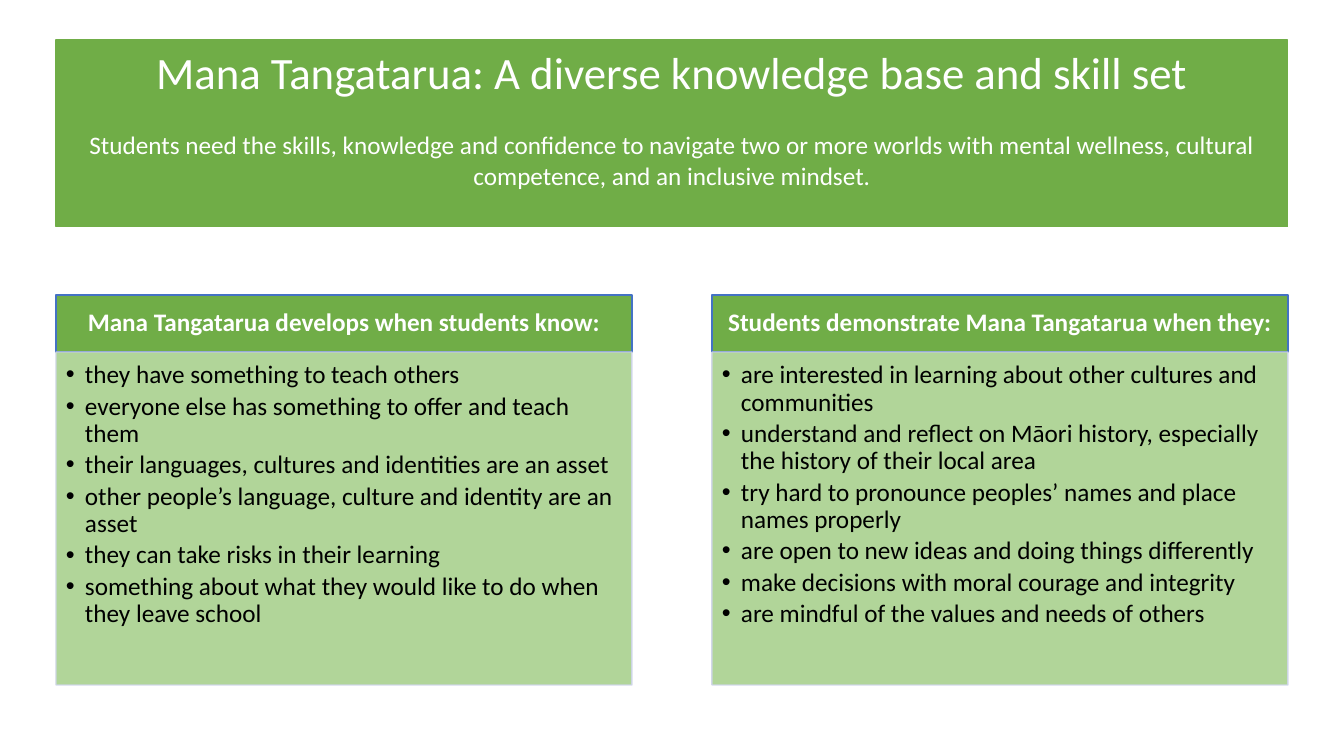
import pptx
import pptx.util
import pptx.dml.color
import pptx.enum.shapes
import pptx.enum.text
import pptx.oxml.ns
import lxml.etree

PX = 914400 / 100.8
COLORS = {
    "green": "70AD47",
    "pale_green": "A9D18E",
    "blue": "4472C4",
    "pale_blue": "CFD5EA",
    "white": "FFFFFF",
    "black": "000000",
}
CENTER = pptx.enum.text.PP_ALIGN.CENTER
TOP = pptx.enum.text.MSO_ANCHOR.TOP
MIDDLE = pptx.enum.text.MSO_ANCHOR.MIDDLE


def px(length):
    return pptx.util.Emu(round(length * PX))


def style_box(box, fill, line, line_width, anchor, insets):
    box.fill.solid()
    box.fill.fore_color.rgb = pptx.dml.color.RGBColor.from_string(COLORS[fill])
    box.line.color.rgb = pptx.dml.color.RGBColor.from_string(COLORS[line])
    box.line.width = pptx.util.Pt(line_width)
    frame = box.text_frame
    frame.word_wrap = True
    frame.auto_size = pptx.enum.text.MSO_AUTO_SIZE.NONE
    frame.vertical_anchor = anchor
    frame.margin_left, frame.margin_top, frame.margin_right, frame.margin_bottom = map(px, insets)


deck = pptx.Presentation()
deck.slide_width = px(1344)
deck.slide_height = px(756)
page = deck.slides.add_slide(deck.slide_layouts[5])

LEFT, PANEL_WIDTH, PANEL_GAP = 56, 576, 80
HEADER_TOP, HEADER_HEIGHT, LIST_HEIGHT = 295, 57, 333

banner = page.shapes.title
banner.left, banner.top = px(LEFT), px(40)
banner.width, banner.height = px(2 * PANEL_WIDTH + PANEL_GAP), px(187)
style_box(banner, "green", "green", 0.75, TOP, (10, 5, 10, 5))
banner.text_frame.text = (
    "Mana Tangatarua: A diverse knowledge base and skill set\n"
    "Students need the skills, knowledge and confidence to navigate two or more worlds "
    "with mental wellness, cultural competence, and an inclusive mindset."
)
for para, size, space in zip(banner.text_frame.paragraphs, (32, 18), (0, 22)):
    para.alignment = CENTER
    para.space_before = pptx.util.Pt(space)
    font = para.runs[0].font
    font.name = "Calibri"
    font.size = pptx.util.Pt(size)
    font.color.rgb = pptx.dml.color.RGBColor.from_string(COLORS["white"])

panels = [
    ("Mana Tangatarua develops when students know:", [
        "they have something to teach others",
        "everyone else has something to offer and teach them",
        "their languages, cultures and identities are an asset",
        "other people’s language, culture and identity are an asset",
        "they can take risks in their learning",
        "something about what they would like to do when they leave school",
    ]),
    ("Students demonstrate Mana Tangatarua when they:", [
        "are interested in learning about other cultures and communities",
        "understand and reflect on Māori history, especially the history of their local area",
        "try hard to pronounce peoples’ names and place names properly",
        "are open to new ideas and doing things differently",
        "make decisions with moral courage and integrity",
        "are mindful of the values and needs of others",
    ]),
]

for column, (heading, points) in enumerate(panels):
    left = LEFT + column * (PANEL_WIDTH + PANEL_GAP)
    header = page.shapes.add_shape(
        pptx.enum.shapes.MSO_SHAPE.RECTANGLE,
        px(left), px(HEADER_TOP), px(PANEL_WIDTH), px(HEADER_HEIGHT))
    header.shadow.inherit = False
    style_box(header, "green", "blue", 1, MIDDLE, (14, 8, 14, 8))
    header.text_frame.text = heading
    para = header.text_frame.paragraphs[0]
    para.alignment = CENTER
    para.line_spacing = 0.9
    font = para.runs[0].font
    font.name = "Calibri"
    font.size = pptx.util.Pt(18)
    font.bold = True
    font.color.rgb = pptx.dml.color.RGBColor.from_string(COLORS["white"])

    body = page.shapes.add_shape(
        pptx.enum.shapes.MSO_SHAPE.RECTANGLE,
        px(left), px(HEADER_TOP + HEADER_HEIGHT), px(PANEL_WIDTH), px(LIST_HEIGHT))
    body.shadow.inherit = False
    style_box(body, "pale_green", "pale_blue", 1, TOP, (10, 10, 14, 16))
    for color in body._element.spPr.iter(pptx.oxml.ns.qn("a:srgbClr")):
        lxml.etree.SubElement(color, pptx.oxml.ns.qn("a:alpha"), val="90000")
    body.text_frame.text = "\n".join(points)
    for para in body.text_frame.paragraphs:
        para.alignment = pptx.enum.text.PP_ALIGN.LEFT
        para.level = 1
        para.line_spacing = 0.9
        para.space_after = pptx.util.Pt(3)
        properties = para._p.get_or_add_pPr()
        properties.set("marL", str(px(19)))
        properties.set("indent", str(-px(19)))
        lxml.etree.SubElement(properties, pptx.oxml.ns.qn("a:buFont"), typeface="Arial")
        lxml.etree.SubElement(properties, pptx.oxml.ns.qn("a:buChar"), char="•")
        font = para.runs[0].font
        font.name = "Calibri"
        font.size = pptx.util.Pt(18)
        font.color.rgb = pptx.dml.color.RGBColor.from_string(COLORS["black"])

deck.save("out.pptx")
